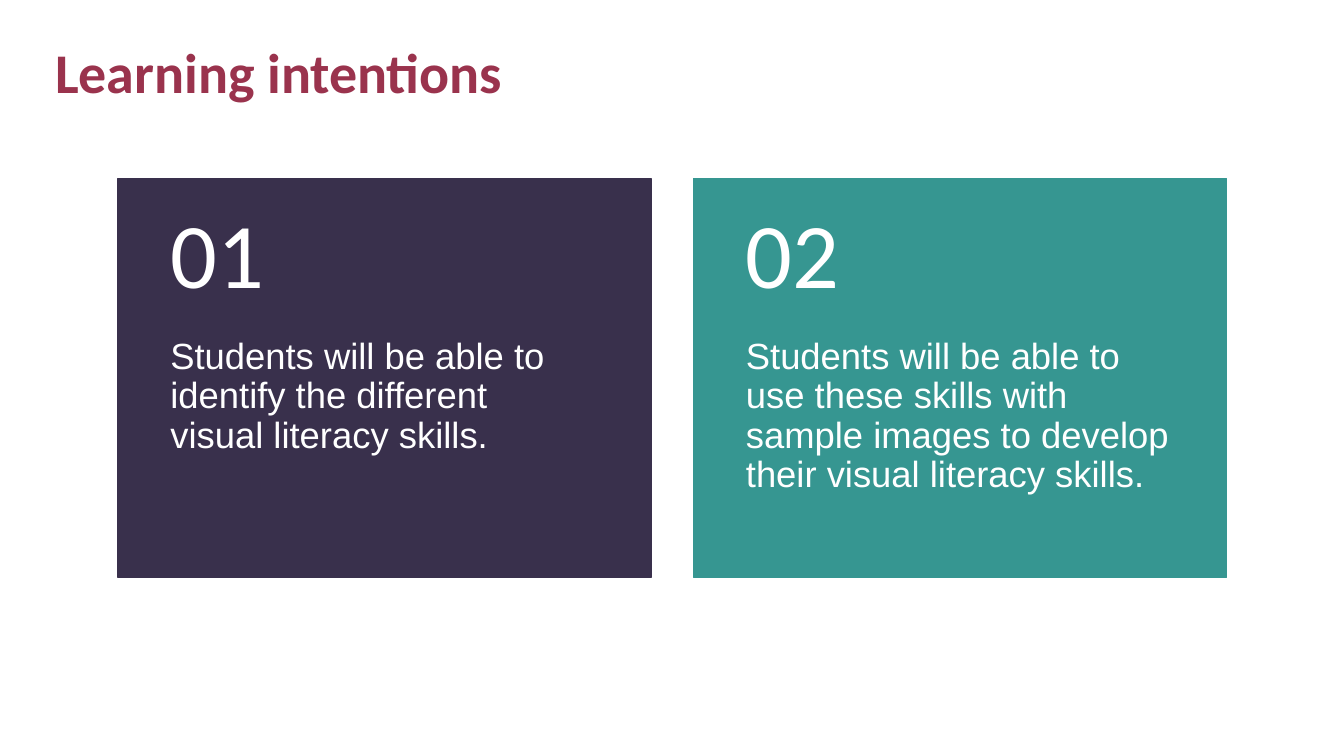
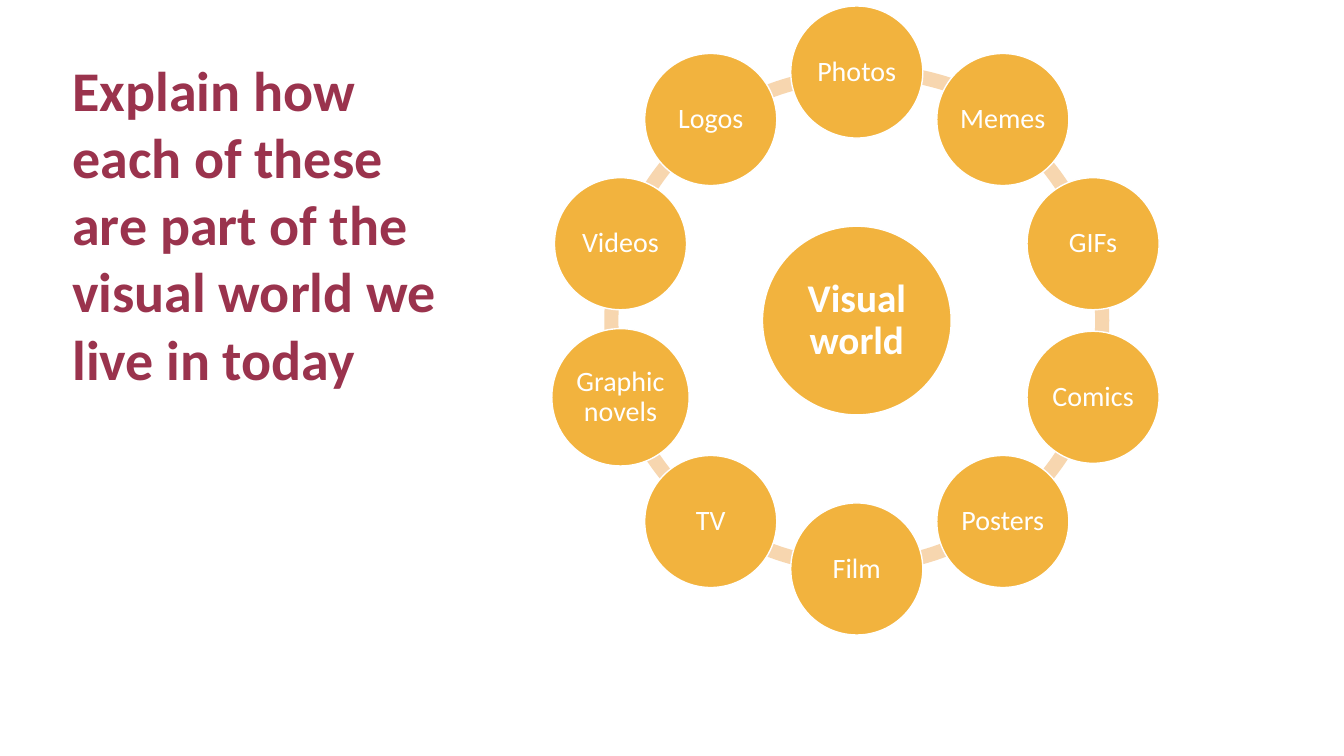
from math import cos, radians, sin

from pptx import Presentation
from pptx.dml.color import RGBColor
from pptx.enum.shapes import MSO_SHAPE as Shape
from pptx.enum.text import MSO_ANCHOR as Anchor, PP_ALIGN as Align
from pptx.util import Emu, Inches, Pt

SLIDE_W, SLIDE_H = Inches(13.333), Inches(7.5)
ROWS = 75
CELL = SLIDE_H / ROWS
HEADING, BODY = "Calibri", "Arial"
COLORS = {
    "title": "9A334D",
    "plum": "39304C",
    "teal": "369691",
    "amber": "F2B33E",
    "peach": "F7D6AF",
    "white": "FFFFFF",
}
CARDS = [
    ("01", "Students will be able to identify the different \nvisual literacy skills.", "plum"),
    ("02", "Students will be able to use these skills with sample images "
           "to develop their visual literacy skills.", "teal"),
]
MEDIA = ["Photos", "Memes", "GIFs", "Comics", "Posters",
         "Film", "TV", "Graphic novels", "Videos", "Logos"]


def cells(*lengths):
    return [Emu(round(length * CELL)) for length in lengths]


def rgb(name):
    return RGBColor.from_string(COLORS[name])


def write(frame, text, size, color="white", font=HEADING, bold=False, spacing=0.9,
          align=Align.LEFT, anchor=Anchor.TOP, insets=(1, 0.5, 1, 0.5)):
    frame.word_wrap = True
    frame.vertical_anchor = anchor
    (frame.margin_left, frame.margin_top,
     frame.margin_right, frame.margin_bottom) = cells(*insets)
    paragraph = frame.paragraphs[0]
    paragraph.alignment = align
    paragraph.line_spacing = spacing
    for index, line in enumerate(text.split("\n")):
        if index:
            paragraph.add_line_break()
        run = paragraph.add_run()
        run.text = line
        run.font.name, run.font.size, run.font.bold = font, Pt(size), bold
        run.font.color.rgb = rgb(color)


def add_text(slide, box, text, size, **style):
    write(slide.shapes.add_textbox(*cells(*box)).text_frame, text, size, **style)


def add_filled(slide, preset, box, fill, line=None):
    shape = slide.shapes.add_shape(preset, *cells(*box))
    shape.shadow.inherit = False
    shape.fill.solid()
    shape.fill.fore_color.rgb = rgb(fill)
    if line:
        shape.line.color.rgb = rgb(line)
        shape.line.width = Pt(1)
    else:
        shape.line.fill.background()
    return shape


def add_title(slide, box, text, spacing):
    add_text(slide, box, text, 40, color="title", bold=True, spacing=spacing)


def add_card(slide, box, number, intention, color):
    left, top, width, height = box
    number_height = height * 0.4
    add_filled(slide, Shape.RECTANGLE, box, color, color)
    add_text(slide, (left, top + number_height, width, height - number_height),
             intention, 26, font=BODY, insets=(5.2, 0, 5.2, 3.6))
    add_text(slide, (left, top, width, number_height), number, 66,
             anchor=Anchor.MIDDLE, insets=(5.2, 1.8, 5.2, 1.8))


def add_cards(slide, box, gap):
    left, top, width, height = box
    card_width = (width - gap * (len(CARDS) - 1)) / len(CARDS)
    for index, card in enumerate(CARDS):
        add_card(slide, (left + index * (card_width + gap), top, card_width, height), *card)


def centred(x, y, width, height):
    return x - width / 2, y - height / 2, width, height


def add_bubble(slide, x, y, diameter, label, size, bold=False):
    bubble = add_filled(slide, Shape.OVAL, centred(x, y, diameter, diameter), "amber", "white")
    write(bubble.text_frame, label, size, bold=bold, align=Align.CENTER,
          anchor=Anchor.MIDDLE, insets=(0.2, 0.2, 0.2, 0.2))


def add_media_ring(slide, box):
    left, top, width, height = box
    x, y = left + width / 2, top + height / 2
    bubble_size = width * 0.21
    orbit = (width - bubble_size) / 2
    step = 360 / len(MEDIA)
    angles = [270 + step * index for index in range(len(MEDIA))]
    for index, angle in enumerate(angles):
        link_size = (50.1, 50.1) if index else (56, 51.1)
        link = add_filled(slide, Shape.BLOCK_ARC, centred(x, y, *link_size), "peach")
        for slot, end in enumerate((angle, angle + step)):
            link.adjustments[slot] = end % 360 * 0.6
        link.adjustments[2] = 0.028
    add_bubble(slide, x, y, width * 0.3, "Visual world", 28, bold=True)
    for label, angle in zip(MEDIA, angles):
        diameter = bubble_size * (1.04 if " " in label else 1)
        add_bubble(slide, x + orbit * cos(radians(angle)), y + orbit * sin(radians(angle)),
                   diameter, label, 20)


def build_intentions(slide):
    add_title(slide, (4.5, 4, 115, 6.8), "Learning intentions", 0.9)
    add_cards(slide, (11.7, 17.7, 110, 39.6), 4.2)


def build_visual_world(slide):
    add_media_ring(slide, (53.8, 0.6, 62.4, 62.4))
    add_title(slide, (6.2, 5, 39.3, 35.8),
              "Explain how each of these are part of the visual world we live in today", 1.0)


def main():
    deck = Presentation()
    deck.slide_width, deck.slide_height = SLIDE_W, SLIDE_H
    for build in (build_intentions, build_visual_world):
        build(deck.slides.add_slide(deck.slide_layouts[6]))
    deck.save("out.pptx")


if __name__ == "__main__":
    main()
